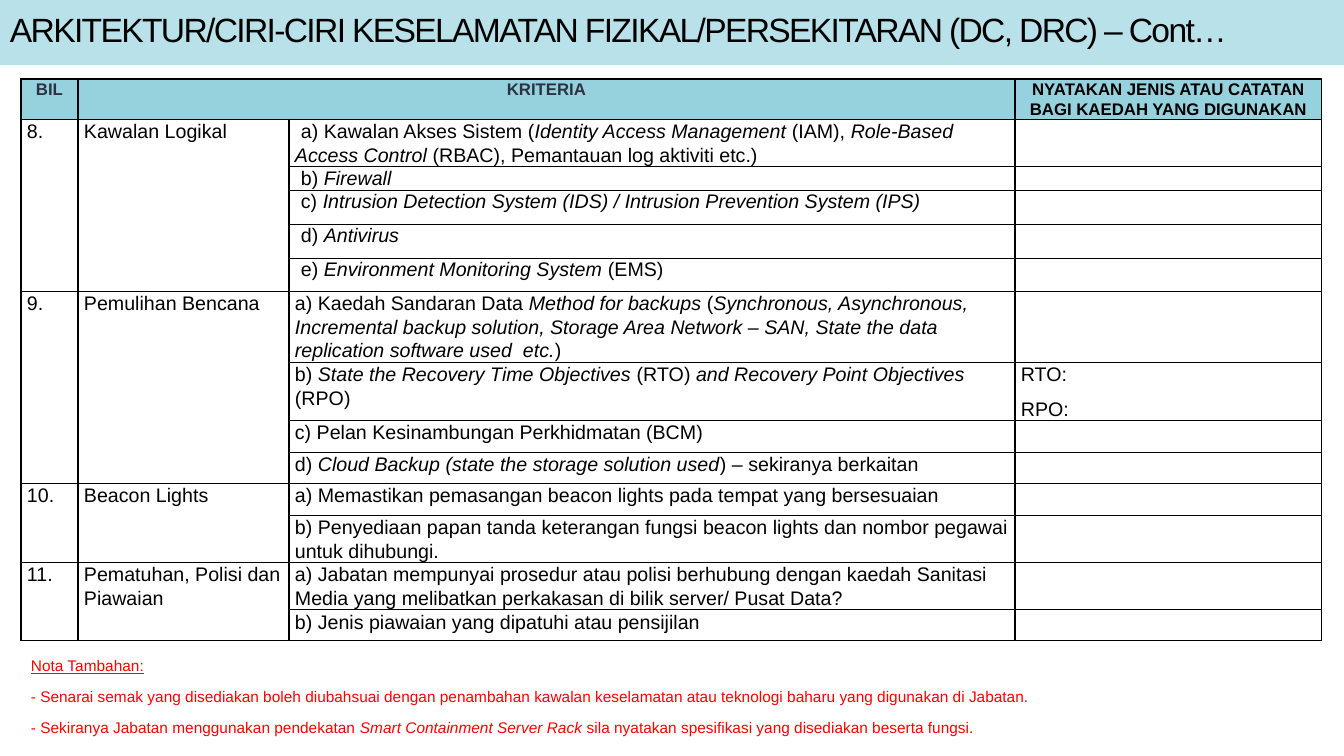
from dataclasses import dataclass

from lxml import etree
from pptx import Presentation
from pptx import util as u
from pptx.dml.color import RGBColor
from pptx.enum import shapes, text
from pptx.oxml import ns

TITLE = "ARKITEKTUR/CIRI-CIRI KESELAMATAN FIZIKAL/PERSEKITARAN (DC, DRC) – Cont…"
BIL, KRITERIA, CATATAN = "BIL", "KRITERIA", "NYATAKAN JENIS ATAU CATATAN BAGI KAEDAH YANG DIGUNAKAN"

# Asterisks enclose italics. Criterion: (text, answer paragraphs, row height in px)
GROUPS = [
    ("8.", "Kawalan Logikal", [
        ("a) Kawalan Akses Sistem (*Identity Access Management* (IAM), *Role-Based Access Control "
         "*(RBAC), Pemantauan log aktiviti etc.)", [], 47),
        ("b)* Firewall*", [], 24),
        ("c) *Intrusion Detection System (IDS) / Intrusion Prevention System (IPS)*", [], 34),
        ("d) *Antivirus*", [], 34),
        ("e) *Environment Monitoring System *(EMS)", [], 33),
    ]),
    ("9.", "Pemulihan Bencana", [
        ("a) Kaedah Sandaran Data *Method for backups *(*Synchronous, Asynchronous, Incremental "
         "backup solution, Storage Area Network – SAN, State the data replication software "
         "used  etc.*)", [], 71),
        ("b) *State the Recovery Time Objectives *(RTO) *and Recovery Point Objectives* (RPO)",
         ["RTO:", "RPO:"], 58),
        ("c) Pelan Kesinambungan Perkhidmatan (BCM)", [], 32),
        ("d) *Cloud Backup (state the storage solution used*) – sekiranya berkaitan", [], 31),
    ]),
    ("10.", "Beacon Lights", [
        ("a) Memastikan pemasangan beacon lights pada tempat yang bersesuaian", [], 32),
        ("b) Penyediaan papan tanda keterangan fungsi beacon lights dan nombor pegawai untuk "
         "dihubungi.", [], 47),
    ]),
    ("11.", "Pematuhan, Polisi dan Piawaian", [
        ("a) Jabatan mempunyai prosedur atau polisi berhubung dengan kaedah Sanitasi Media yang "
         "melibatkan perkakasan di bilik server/ Pusat Data?", [], 47),
        ("b) Jenis piawaian yang dipatuhi atau pensijilan", [], 31),
    ]),
]
INDENTED_GROUP = "8."
SINGLE_SPACED = ("c)", "d)", "e)")  # within the indented group

NOTE_HEADING = "Nota Tambahan:"
NOTES = [
    "- Senarai semak yang disediakan boleh diubahsuai dengan penambahan kawalan keselamatan atau "
    "teknologi baharu yang digunakan di Jabatan.",
    "- Sekiranya Jabatan menggunakan pendekatan *Smart Containment Server Rack *sila nyatakan "
    "spesifikasi yang disediakan beserta fungsi.",
]

SLIDE = (1344, 756)
TITLE_BOX = (0, 0, 1344, 65)
TABLE_AT = (21, 79)
COLUMNS = [57, 211, 726, 307]
HEADER_HEIGHT = 40
NOTE_BOX = (21, 650, 1078, 92)
CELL_INSET = INDENT = 6


@dataclass(frozen=True)
class Theme:
    font: str = "Arial"
    band: str = "B9E1E9"
    header: str = "96D2DE"
    header_ink: str = "2C3242"
    ink: str = "000000"
    note: str = "FF0000"
    title_size: int = 24
    header_size: int = 12
    body_size: int = 14
    note_size: int = 11


THEME = Theme()
LOOSE = {"line_spacing": 1.07, "space_after": u.Pt(8)}
CENTRED = {**LOOSE, "alignment": text.PP_ALIGN.CENTER}
TIGHT = {"line_spacing": 1.0}


def px(length):
    return u.Emu(round(length * 914400 / 100.8))


def apply(target, values):
    for name, value in values.items():
        setattr(target, name, value)


def write(frame, lines, size, colour, layout, indent=0, **style):
    """Fill a text frame with one paragraph per line, turning asterisks into italics."""
    for number, line in enumerate(lines):
        paragraph = frame.add_paragraph() if number else frame.paragraphs[0]
        apply(paragraph, layout)
        if indent:
            paragraph._p.get_or_add_pPr().set("indent", str(px(indent)))
        for position, words in enumerate(line.split("*")):
            if words:
                run = paragraph.add_run()
                run.text = words
                apply(run.font, {"name": THEME.font, "size": u.Pt(size),
                                 "italic": position % 2 == 1, **style})
                run.font.color.rgb = RGBColor.from_string(colour)


def dress(cell):
    """Give a cell its insets, black borders, no fill and body-sized empty lines."""
    apply(cell, {"margin_left": px(CELL_INSET), "margin_right": px(CELL_INSET),
                 "margin_top": 0, "margin_bottom": 0})
    properties = cell._tc.get_or_add_tcPr()
    for side in ("a:lnL", "a:lnR", "a:lnT", "a:lnB"):
        line = etree.SubElement(properties, ns.qn(side), w=str(u.Pt(1)))
        fill = etree.SubElement(line, ns.qn("a:solidFill"))
        etree.SubElement(fill, ns.qn("a:srgbClr"), val=THEME.ink)
    cell.fill.background()
    etree.SubElement(cell.text_frame.paragraphs[0]._p, ns.qn("a:endParaRPr"),
                     sz=str(THEME.body_size * 100))


def add_title(slide):
    band = slide.shapes.add_shape(shapes.MSO_SHAPE.RECTANGLE, *map(px, TITLE_BOX))
    band.shadow.inherit = False
    band.fill.solid()
    band.fill.fore_color.rgb = RGBColor.from_string(THEME.band)
    band.line.fill.background()
    apply(band.text_frame, {"word_wrap": True, "vertical_anchor": text.MSO_ANCHOR.MIDDLE})
    write(band.text_frame, [TITLE], THEME.title_size, THEME.ink,
          {"alignment": text.PP_ALIGN.LEFT, "line_spacing": 0.85})
    band.text_frame.paragraphs[0].runs[0].font._element.set("spc", "-120")


def add_criteria(slide):
    heights = [HEADER_HEIGHT] + [height for *_, items in GROUPS for *_, height in items]
    frame = slide.shapes.add_table(len(heights), len(COLUMNS), *map(px, TABLE_AT),
                                   px(sum(COLUMNS)), px(sum(heights)))
    table = frame.table
    apply(table, {"first_row": False, "horz_banding": False})
    for column, width in zip(table.columns, COLUMNS):
        column.width = px(width)
    for row, height in zip(table.rows, heights):
        row.height = px(height)
    for cell in table.iter_cells():
        dress(cell)

    table.cell(0, 1).merge(table.cell(0, 2))
    for column, heading, colour in ((0, BIL, THEME.header_ink), (1, KRITERIA, THEME.header_ink),
                                    (3, CATATAN, THEME.ink)):
        cell = table.cell(0, column)
        cell.fill.solid()
        cell.fill.fore_color.rgb = RGBColor.from_string(THEME.header)
        write(cell.text_frame, [heading], THEME.header_size, colour, CENTRED, bold=True)

    top = 1
    for number, topic, items in GROUPS:
        for column, label in enumerate((number, topic)):
            cell = table.cell(top, column)
            cell.merge(table.cell(top + len(items) - 1, column))
            write(cell.text_frame, [label], THEME.body_size, THEME.ink, LOOSE)
        indented = number == INDENTED_GROUP
        for row, (criterion, answers, _) in enumerate(items, top):
            layout = TIGHT if indented and criterion.startswith(SINGLE_SPACED) else LOOSE
            write(table.cell(row, 2).text_frame, [criterion], THEME.body_size, THEME.ink,
                  layout, INDENT if indented else 0)
            write(table.cell(row, 3).text_frame, answers, THEME.body_size, THEME.ink, LOOSE)
        top += len(items)


def add_notes(slide):
    frame = slide.shapes.add_textbox(*map(px, NOTE_BOX)).text_frame
    frame.word_wrap = True
    write(frame, [NOTE_HEADING, *NOTES], THEME.note_size, THEME.note, LOOSE)
    frame.paragraphs[0].runs[0].font.underline = True


def main():
    deck = Presentation()
    deck.slide_width, deck.slide_height = map(px, SLIDE)
    slide = deck.slides.add_slide(deck.slide_layouts[6])
    add_title(slide)
    add_criteria(slide)
    add_notes(slide)
    deck.save("out.pptx")


if __name__ == "__main__":
    main()
